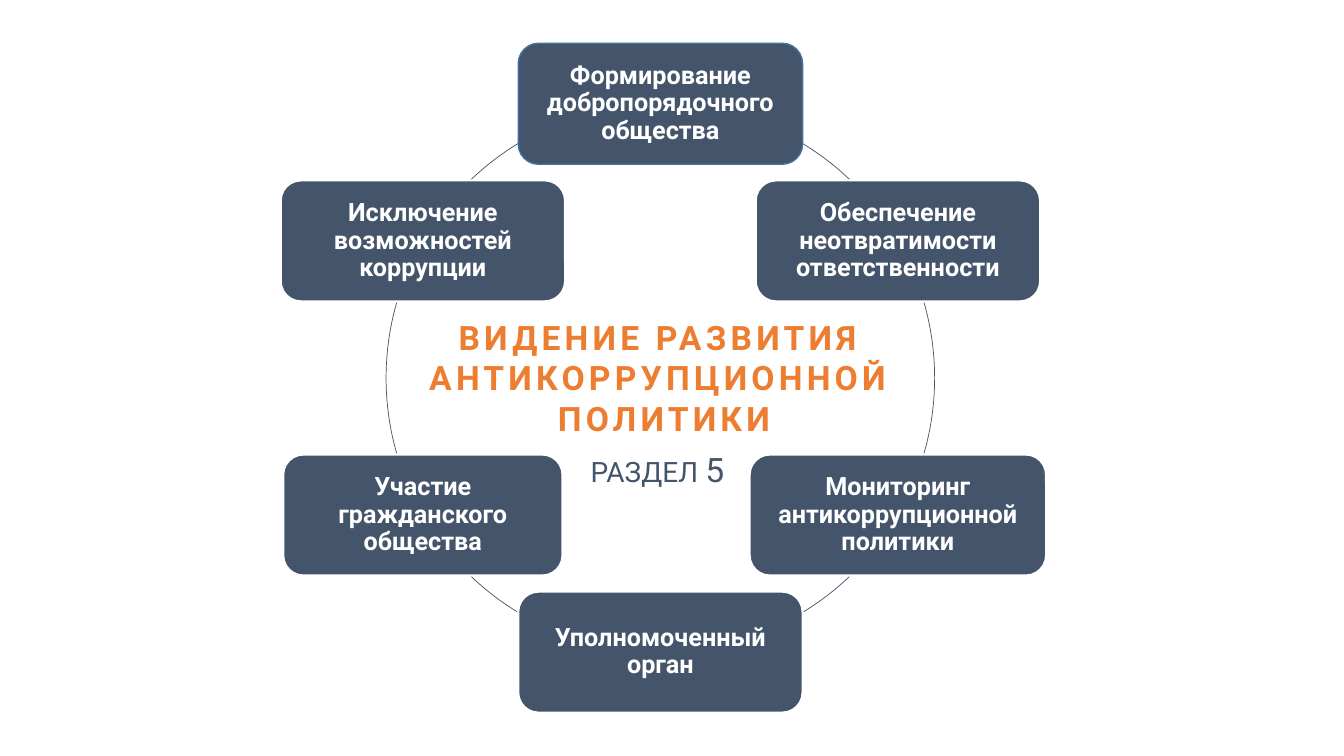
from dataclasses import dataclass
from math import cos, radians, sin

from pptx import Presentation
from pptx.dml.color import RGBColor
from pptx.enum.shapes import MSO_SHAPE as Shape
from pptx.enum.text import MSO_ANCHOR as Anchor, MSO_AUTO_SIZE as AutoSize, PP_ALIGN as Align
from pptx.oxml.ns import qn
from pptx.util import Inches, Pt


@dataclass(frozen=True)
class Theme:
    font: str = "Roboto"
    slate: RGBColor = RGBColor(0x44, 0x54, 0x6A)
    orange: RGBColor = RGBColor(0xED, 0x7D, 0x31)
    white: RGBColor = RGBColor(0xFF, 0xFF, 0xFF)
    blue: RGBColor = RGBColor(0x43, 0x73, 0x9E)
    heading: Pt = Pt(24)
    section: Pt = Pt(20)
    topic: Pt = Pt(18)


THEME = Theme()
TOPIC_HEIGHT = 1.2

# Clockwise from the top: wording, box width, outline colour, outline width
TOPICS = [
    ("Формирование добропорядочного общества", 2.82, THEME.blue, 1),
    ("Обеспечение неотвратимости ответственности", 2.82, THEME.white, 1.5),
    ("Мониторинг антикоррупционной политики", 2.94, THEME.white, 1.5),
    ("Уполномоченный орган", 2.82, THEME.white, 1.5),
    ("Участие гражданского общества", 2.77, THEME.white, 1.5),
    ("Исключение возможностей коррупции", 2.82, THEME.white, 1.5),
]
# Visible parts of the ring between the boxes, in degrees clockwise from the right
ARCS = [(-58.8, -46.3), (-16, 16), (46.3, 58.8),
        (121.2, 133.7), (164, 196), (226.3, 238.8)]


def style_font(font, size, color, bold=False):
    font.name, font.size, font.bold = THEME.font, size, bold
    font.color.rgb = color


def add_topic(slide, box, wording, outline, outline_width):
    topic = slide.shapes.add_shape(Shape.ROUNDED_RECTANGLE, *map(Inches, box))
    topic.shadow.inherit = False
    topic.fill.solid()
    topic.fill.fore_color.rgb = THEME.slate
    topic.line.color.rgb = outline
    topic.line.width = Pt(outline_width)
    frame = topic.text_frame
    frame.word_wrap = True
    frame.vertical_anchor = Anchor.MIDDLE
    frame.margin_left = frame.margin_right = Inches(0.07)
    frame.margin_top = frame.margin_bottom = Inches(0.07)
    paragraph = frame.paragraphs[0]
    paragraph.text = wording
    paragraph.alignment = Align.CENTER
    paragraph.line_spacing = 0.9
    style_font(paragraph.font, THEME.topic, THEME.white, bold=True)


def add_cycle(slide, left, top, diameter):
    radius = diameter / 2
    # Ring
    for start, end in ARCS:
        arc = slide.shapes.add_shape(Shape.ARC, *map(Inches, (left, top, diameter, diameter)))
        # An adjustment of 0.6 is one degree
        arc.adjustments[0] = start % 360 * 0.6
        arc.adjustments[1] = end % 360 * 0.6
        arc.shadow.inherit = False
        arc.fill.background()
        arc.line.color.rgb = THEME.slate
        arc.line.width = Pt(0.5)
    # Topics, centred on the ring at equal angles
    for index, (wording, width, outline, outline_width) in enumerate(TOPICS):
        angle = radians(index * 360 / len(TOPICS) - 90)
        center_x = left + radius + radius * cos(angle)
        center_y = top + radius + radius * sin(angle)
        box = (center_x - width / 2, center_y - TOPIC_HEIGHT / 2, width, TOPIC_HEIGHT)
        add_topic(slide, box, wording, outline, outline_width)


def place_heading(slide, left, top, width, height):
    heading = slide.shapes.title
    heading.left, heading.top = Inches(left), Inches(top)
    heading.width, heading.height = Inches(width), Inches(height)
    frame = heading.text_frame
    frame.text = "ВИДЕНИЕ РАЗВИТИЯ \nАНТИКОРРУПЦИОННОЙ \nПОЛИТИКИ"
    frame.word_wrap = True
    frame.auto_size = AutoSize.SHAPE_TO_FIT_TEXT
    frame.vertical_anchor = Anchor.MIDDLE
    for paragraph in frame.paragraphs:
        paragraph.alignment = Align.CENTER
        paragraph.line_spacing = 1.0
        style_font(paragraph.font, THEME.heading, THEME.orange, bold=True)
    # Letter spacing of 3 pt
    for properties in heading.element.iter(qn("a:defRPr")):
        properties.set("spc", "300")


def add_section_label(slide, left, top, width, height):
    label = slide.shapes.add_textbox(*map(Inches, (left, top, width, height)))
    frame = label.text_frame
    frame.word_wrap = True
    frame.auto_size = AutoSize.SHAPE_TO_FIT_TEXT
    frame.vertical_anchor = Anchor.MIDDLE
    paragraph = frame.paragraphs[0]
    style_font(paragraph.font, THEME.section, THEME.slate)
    paragraph.add_run().text = "РАЗДЕЛ "
    number = paragraph.add_run()
    number.text = "5"
    number.font.size = THEME.heading


def main():
    deck = Presentation()
    deck.slide_width, deck.slide_height = Inches(13.33), Inches(7.5)
    slide = deck.slides.add_slide(deck.slide_layouts[5])
    add_cycle(slide, 3.83, 1.03, 5.44)
    place_heading(slide, 4.05, 3.09, 5.07, 1.31)
    add_section_label(slide, 5.76, 4.4, 3.87, 0.5)
    deck.save("out.pptx")


if __name__ == "__main__":
    main()
